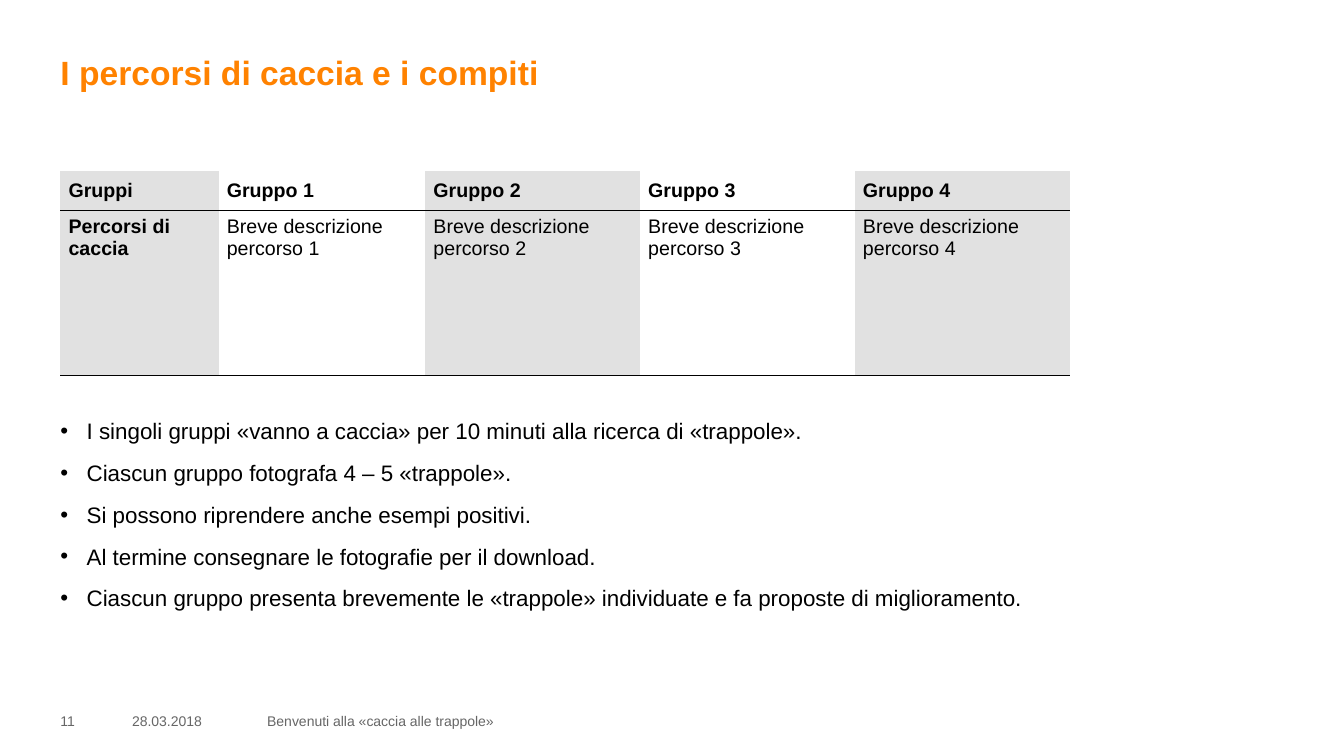
from lxml import etree
from pptx import Presentation
from pptx.dml.color import RGBColor
from pptx.enum.text import MSO_ANCHOR
from pptx.oxml.ns import qn
from pptx.util import Inches, Pt

TOP, MIDDLE = MSO_ANCHOR.TOP, MSO_ANCHOR.MIDDLE
ORANGE = RGBColor(0xFF, 0x82, 0x00)
BLACK = RGBColor(0x00, 0x00, 0x00)
GREY = RGBColor(0x66, 0x66, 0x66)
LIGHT = RGBColor(0xE1, 0xE1, 0xE1)

LEFT = 0.6
CONTENT_W = 10
COLS = [1.57, 2.05, 2.13, 2.13, 2.13]
ROWS = [0.39, 1.63]
INDENT = Inches(0.26)


def write(tf, text, size, color=BLACK, bold=False, bullet=False, gap=0):
    """Fill a text frame, one paragraph for each line of text."""
    tf.word_wrap = True
    for i, line in enumerate(text.split("\n")):
        p = tf.paragraphs[0] if i == 0 else tf.add_paragraph()
        if bullet:
            pPr = p._p.get_or_add_pPr()
            pPr.set("marL", str(INDENT))
            pPr.set("indent", str(-INDENT))
            etree.SubElement(pPr, qn("a:buFont"), typeface="Arial")
            etree.SubElement(pPr, qn("a:buChar"), char="•")
        if i and gap:
            p.space_before = Pt(gap)
        r = p.add_run()
        r.text = line
        r.font.name = "Arial"
        r.font.size = Pt(size)
        r.font.bold = bold
        r.font.color.rgb = color


def add_box(s, x, y, w, h, anchor=TOP):
    """Add a text box without margins and return its text frame."""
    tf = s.shapes.add_textbox(Inches(x), Inches(y), Inches(w), Inches(h)).text_frame
    tf.margin_left = tf.margin_right = tf.margin_top = tf.margin_bottom = 0
    tf.vertical_anchor = anchor
    return tf


prs = Presentation()
prs.slide_width, prs.slide_height = Inches(13.33), Inches(7.5)
s = prs.slides.add_slide(prs.slide_layouts[6])

# Title
write(add_box(s, LEFT, 0.52, 12.13, 0.94), "I percorsi di caccia e i compiti",
      24, color=ORANGE, bold=True)

# Table of groups and hunting routes
groups = range(1, 5)
cells = [
    ["Gruppi"] + [f"Gruppo {n}" for n in groups],
    ["Percorsi di caccia"] + [f"Breve descrizione\npercorso {n}" for n in groups],
]
table = s.shapes.add_table(len(ROWS), len(COLS), Inches(LEFT), Inches(1.7),
                           Inches(CONTENT_W), Inches(sum(ROWS))).table
table.first_row = table.horz_banding = False
for col, width in zip(table.columns, COLS):
    col.width = Inches(width)
for row, height in zip(table.rows, ROWS):
    row.height = Inches(height)

for i, texts in enumerate(cells):
    for j, text in enumerate(texts):
        cell = table.cell(i, j)
        cell.margin_left = cell.margin_right = Inches(0.08)
        cell.margin_top = cell.margin_bottom = Inches(0.05)
        cell.vertical_anchor = MIDDLE if i == 0 else TOP
        write(cell.text_frame, text, 14, bold=i == 0 or j == 0)
        # Every second column is shaded
        if j % 2 == 0:
            cell.fill.solid()
            cell.fill.fore_color.rgb = LIGHT
        else:
            cell.fill.background()
        # Only horizontal rules below each row
        tcPr = cell._tc.get_or_add_tcPr()
        for k, side in enumerate(("lnL", "lnR", "lnT", "lnB")):
            ln = etree.Element(qn(f"a:{side}"), w=str(Pt(0.67)))
            if side == "lnB" or (side == "lnT" and i > 0):
                fill = etree.SubElement(ln, qn("a:solidFill"))
                etree.SubElement(fill, qn("a:srgbClr"), val=str(BLACK))
            else:
                etree.SubElement(ln, qn("a:noFill"))
            tcPr.insert(k, ln)

# Tasks
tasks = [
    "I singoli gruppi «vanno a caccia» per 10 minuti alla ricerca di «trappole».",
    "Ciascun gruppo fotografa 4 – 5 «trappole».",
    "Si possono riprendere anche esempi positivi.",
    "Al termine consegnare le fotografie per il download.",
    "Ciascun gruppo presenta brevemente le «trappole» individuate e fa proposte di miglioramento.",
]
write(add_box(s, LEFT, 4.14, CONTENT_W, 2.6), "\n".join(tasks), 16, bullet=True, gap=10.7)

# Footer: slide number, date, presentation name
for x, w, text in [
    (LEFT, 0.55, "11"),
    (1.31, 1.18, "28.03.2018"),
    (2.65, 8.58, "Benvenuti alla «caccia alle trappole»"),
]:
    write(add_box(s, x, 7.05, w, 0.2, anchor=MIDDLE), text, 10, color=GREY)

prs.save("out.pptx")
